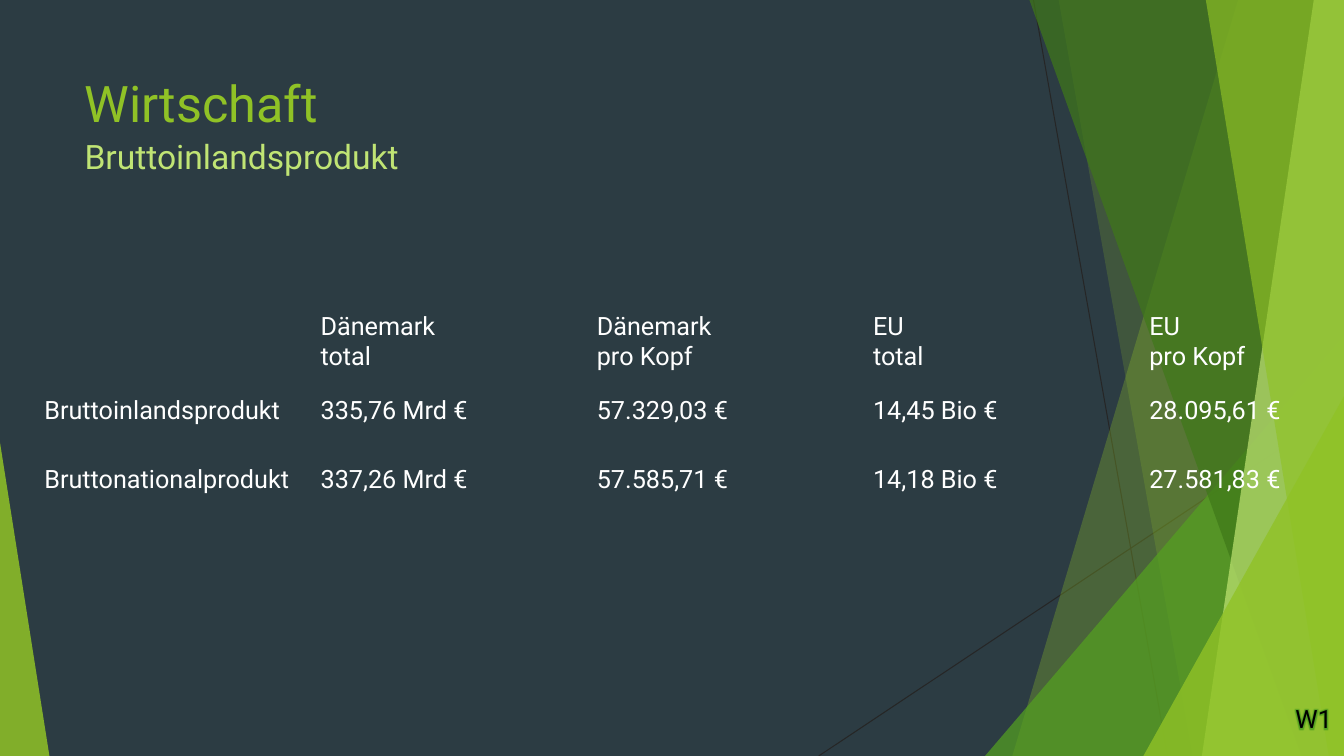
from dataclasses import dataclass

from lxml import etree
from pptx import Presentation
from pptx.dml.color import RGBColor
from pptx.enum.shapes import MSO_CONNECTOR, MSO_SHAPE
from pptx.enum.text import MSO_ANCHOR, MSO_AUTO_SIZE, PP_ALIGN
from pptx.oxml.ns import qn
from pptx.shapes.autoshape import Shape
from pptx.slide import Slide
from pptx.text.text import TextFrame
from pptx.util import Inches, Pt

STRAIGHT = MSO_CONNECTOR.STRAIGHT
TRIANGLE = MSO_SHAPE.ISOSCELES_TRIANGLE
TOP, MIDDLE = MSO_ANCHOR.TOP, MSO_ANCHOR.MIDDLE
LEFT = PP_ALIGN.LEFT
NO_FIT = MSO_AUTO_SIZE.NONE
NO_GRID = "{2D5ABB26-0587-4C30-8999-92F81FD0307C}"
WIDTH, HEIGHT = 13.33, 7.5


@dataclass(frozen=True)
class Theme:
    font: str = "Roboto"
    back: str = "2C3C43"
    line: str = "262626"
    lime: str = "90C226"
    leaf: str = "54A021"
    moss: str = "3F7819"
    pale: str = "C0E474"
    white: str = "FFFFFF"
    black: str = "000000"
    title: int = 36
    sub: int = 24
    body: int = 18


THEME = Theme()


@dataclass(frozen=True)
class Shard:
    """A four-sided pane that reaches the right edge of the slide."""
    top: float
    foot: float
    color: str
    alpha: int


@dataclass(frozen=True)
class Wedge:
    """A right triangle on the lower edge; apex 0 is left, 1 is right."""
    left: float
    top: float
    width: float
    apex: int
    color: str
    alpha: int


@dataclass(frozen=True)
class Label:
    text: str
    left: float
    top: float
    width: float
    height: float
    size: int
    color: str


RAYS = [(10.25, 0, 11.58, HEIGHT), (WIDTH, 4.03, 8.12, HEIGHT)]
PANES = [
    Shard(12.28, 10.04, THEME.lime, 30),
    Shard(10.5, 11.83, THEME.lime, 20),
    Wedge(9.77, 3.33, 3.56, 1, THEME.leaf, 72),
    Shard(10.21, 12.91, THEME.moss, 70),
    Shard(13.03, 11.92, THEME.pale, 70),
    Shard(11.96, 13.18, THEME.lime, 65),
    Wedge(11.34, 3.93, 1.99, 1, THEME.lime, 80),
    Wedge(0, 4.39, 0.49, 0, THEME.lime, 85),
]
TITLE = Label("Wirtschaft", 0.74, 0.67, 9.4, 1.44, THEME.title, THEME.lime)
MARK = Label("W1", 12.75, 6.93, 1.53, 0.4, THEME.body, THEME.black)
SUB = Label("Bruttoinlandsprodukt", 0.74, 1.3, 3.48, 0.5, THEME.sub, THEME.pale)
ROWS = [
    ["", "Dänemark\vtotal", "Dänemark\vpro Kopf", "EU\vtotal", "EU\vpro Kopf"],
    ["Bruttoinlandsprodukt", "335,76 Mrd €", "57.329,03 €",
     "14,45 Bio €", "28.095,61 €"],
    ["Bruttonationalprodukt", "337,26 Mrd €", "57.585,71 €",
     "14,18 Bio €", "27.581,83 €"],
]
COL_WIDTH, ROW_HEIGHT = 2.74, 0.68


def rgb(color: str) -> RGBColor:
    return RGBColor.from_string(color)


def style(frame: TextFrame, size: int, color: str) -> None:
    for para in frame.paragraphs:
        para.alignment = LEFT
        for run in para.runs:
            run.font.name = THEME.font
            run.font.size = Pt(size)
            run.font.color.rgb = rgb(color)


def paint(shape: Shape, color: str, alpha: int) -> None:
    shape.shadow.inherit = False
    shape.line.fill.background()
    shape.fill.solid()
    shape.fill.fore_color.rgb = rgb(color)
    tint = shape.fill._xPr.find(qn("a:solidFill"))[0]
    etree.SubElement(tint, qn("a:alpha"), val=str(alpha * 1000))


def add_ray(slide: Slide, ends: tuple[float, float, float, float]) -> None:
    ray = slide.shapes.add_connector(STRAIGHT, *map(Inches, ends))
    ray.line.color.rgb = rgb(THEME.line)
    ray.line.width = Pt(0.75)
    etree.SubElement(ray._element.spPr, qn("a:effectLst"))


def add_pane(slide: Slide, pane: Shard | Wedge) -> None:
    if isinstance(pane, Wedge):
        shape = slide.shapes.add_shape(
            TRIANGLE, Inches(pane.left), Inches(pane.top),
            Inches(pane.width), Inches(HEIGHT - pane.top))
        shape.adjustments[0] = pane.apex
    else:
        edge, foot = Inches(WIDTH), Inches(HEIGHT)
        draft = slide.shapes.build_freeform(Inches(pane.top), 0)
        draft.add_line_segments(
            [(edge, 0), (edge, foot), (Inches(pane.foot), foot)], close=True)
        shape = draft.convert_to_shape()
    paint(shape, pane.color, pane.alpha)


def fill_label(shape: Shape, label: Label) -> None:
    shape.left, shape.top = Inches(label.left), Inches(label.top)
    shape.width, shape.height = Inches(label.width), Inches(label.height)
    frame = shape.text_frame
    frame.text = label.text
    frame.word_wrap = True
    frame.auto_size = NO_FIT
    frame.vertical_anchor = TOP
    style(frame, label.size, label.color)


def add_label(slide: Slide, label: Label) -> Shape:
    box = slide.shapes.add_textbox(0, 0, 0, 0)
    fill_label(box, label)
    return box


def add_glow(shape: Shape, color: str) -> None:
    props = shape.text_frame.paragraphs[0].runs[0].font._element
    effects = etree.Element(qn("a:effectLst"))
    glow = etree.SubElement(effects, qn("a:glow"), rad=str(Pt(5)))
    etree.SubElement(glow, qn("a:srgbClr"), val=color)
    props.find(qn("a:solidFill")).addnext(effects)


def add_grid(slide: Slide) -> None:
    count, span = len(ROWS), len(ROWS[0])
    table = slide.shapes.add_table(
        count, span, Inches(0.34), Inches(3.05),
        Inches(COL_WIDTH * span), Inches(ROW_HEIGHT * count)).table
    table.first_row = table.horz_banding = False
    table._tbl.tblPr.find(qn("a:tableStyleId")).text = NO_GRID
    for row, texts in zip(table.rows, ROWS):
        for cell, text in zip(row.cells, texts):
            cell.fill.background()
            cell.vertical_anchor = MIDDLE
            cell.text_frame.text = text
            style(cell.text_frame, THEME.body, THEME.white)


def main() -> None:
    deck = Presentation()
    deck.slide_width, deck.slide_height = Inches(WIDTH), Inches(HEIGHT)
    slide = deck.slides.add_slide(deck.slide_layouts[5])
    slide.background.fill.solid()
    slide.background.fill.fore_color.rgb = rgb(THEME.back)

    # Backdrop of thin rays and green panes
    for ends in RAYS:
        add_ray(slide, ends)
    for pane in PANES:
        add_pane(slide, pane)

    # Title, figures and labels
    fill_label(slide.shapes.title, TITLE)
    add_grid(slide)
    add_glow(add_label(slide, MARK), THEME.leaf)
    add_label(slide, SUB)

    deck.save("out.pptx")


if __name__ == "__main__":
    main()
